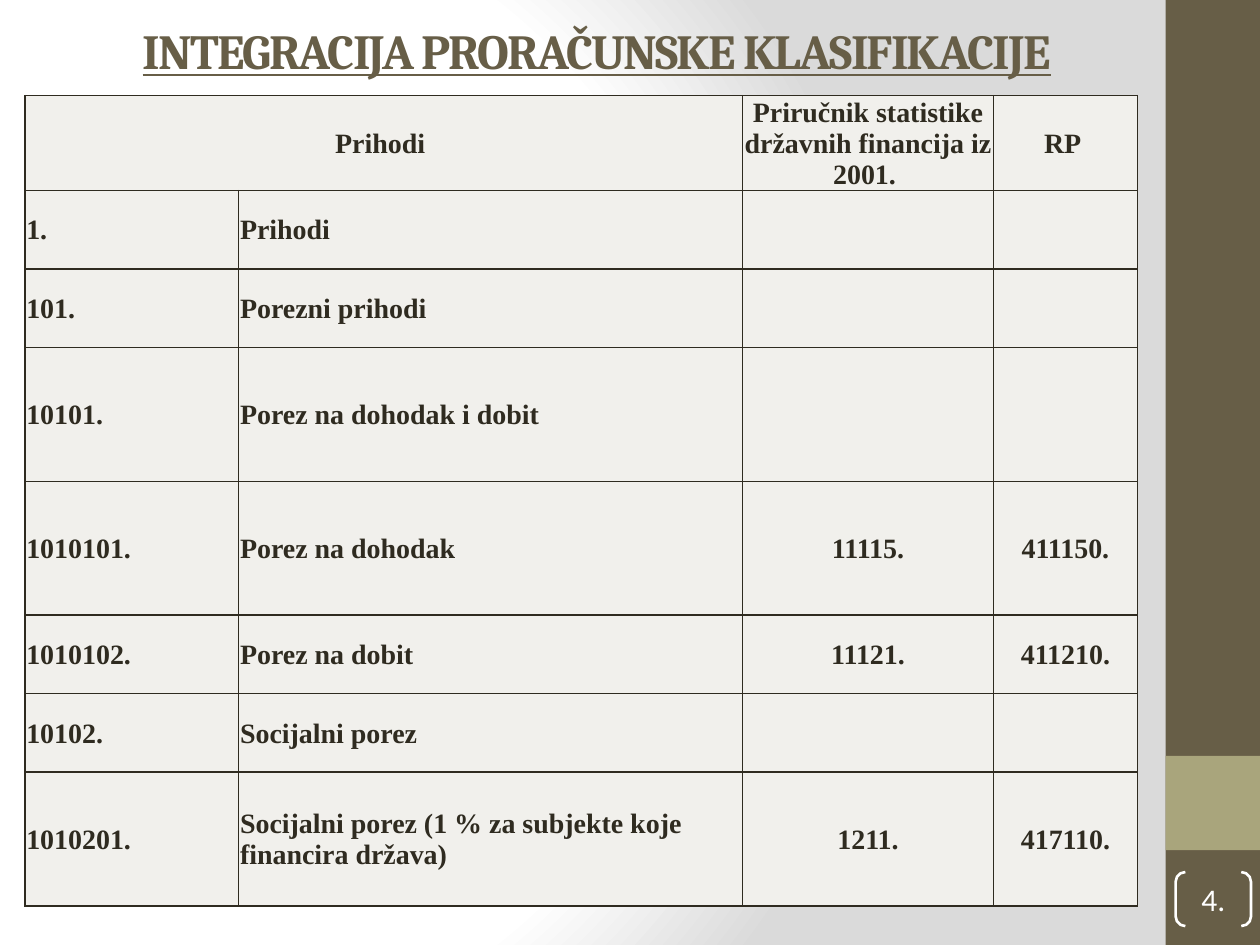
from pptx import Presentation
from pptx.dml.color import RGBColor
from pptx.enum.shapes import MSO_SHAPE as Shape
from pptx.enum.text import MSO_ANCHOR as Anchor, MSO_AUTO_SIZE as AutoSize, PP_ALIGN as Align
from pptx.oxml import parse_xml
from pptx.oxml.ns import nsdecls, qn
from pptx.util import Cm, Pt

OLIVE, SAGE, INK, PAPER, WHITE = "675E47", "A9A57C", "2F2B20", "F1F0EC", "FFFFFF"


def color(hex_value):
    return RGBColor.from_string(hex_value)


def add_span(para, text, font, size, hex_value, bold=False):
    span = para.add_run()
    span.text = text
    span.font.name = font
    span.font.size = Pt(size)
    span.font.bold = bold
    span.font.color.rgb = color(hex_value)
    return span


deck = Presentation()
deck.slide_width, deck.slide_height = Cm(25.4), Cm(19.05)
page = deck.slides.add_slide(deck.slide_layouts[5])

# Radial background
page.background.fill.solid()
background = page.element.find(".//" + qn("p:bgPr"))
stops = "".join(
    f'<a:gs pos="{percent * 1000}"><a:srgbClr val="{shade}"/></a:gs>'
    for percent, shade in [(0, WHITE), (75, WHITE), (100, "DADADA")])
background.replace(background[0], parse_xml(
    f'<a:gradFill {nsdecls("a")} rotWithShape="1"><a:gsLst>{stops}</a:gsLst>'
    '<a:path path="circle"><a:fillToRect l="20000" t="50000" r="100000" b="50000"/>'
    '</a:path></a:gradFill>'))

# Side band with its lighter square
for top, height, fill in [(0, 19.05, OLIVE), (15.24, 1.9, SAGE)]:
    band = page.shapes.add_shape(Shape.RECTANGLE, Cm(23.5), Cm(top), Cm(1.9), Cm(height))
    band.shadow.inherit = False
    band.fill.solid()
    band.fill.fore_color.rgb = color(fill)
    band.line.fill.background()

title = page.shapes.title
title.left, title.top, title.width, title.height = Cm(0.38), Cm(0.33), Cm(23.3), Cm(1.37)
title.text_frame.auto_size = AutoSize.NONE
title.text_frame.vertical_anchor = Anchor.MIDDLE
para = title.text_frame.paragraphs[0]
para.alignment = Align.CENTER
span = add_span(para, "INTEGRACIJA PRORAČUNSKE KLASIFIKACIJE", "Cambria", 28, OLIVE, bold=True)
span.font.underline = True
span.font._element.set("spc", "-100")

# Classification table
rows = [
    ("Prihodi ", "", "Priručnik statistike državnih financija iz 2001. ", "RP "),
    ("1.", "Prihodi", "", ""),
    ("101.", "Porezni prihodi", "", ""),
    ("10101.", "Porez na dohodak i dobit", "", ""),
    ("1010101.", "Porez na dohodak", "11115.", "411150."),
    ("1010102.", "Porez na dobit", "11121.", "411210."),
    ("10102.", "Socijalni porez", "", ""),
    ("1010201.", "Socijalni porez (1 % za subjekte koje financira država)", "1211.", "417110."),
]
column_widths = [4.31, 10.16, 5.06, 2.9]
low, high = 1.58, 2.7
row_heights = [low, low, low, high, high, low, low, high]

table = page.shapes.add_table(
    len(rows), len(column_widths), Cm(0.5), Cm(1.93),
    Cm(sum(column_widths)), Cm(sum(row_heights))).table
for column, width in zip(table.columns, column_widths):
    column.width = Cm(width)
for row, height in zip(table.rows, row_heights):
    row.height = Cm(height)
table.cell(0, 0).merge(table.cell(0, 1))

for r, texts in enumerate(rows):
    for c, text in enumerate(texts):
        cell = table.cell(r, c)
        cell.fill.solid()
        cell.fill.fore_color.rgb = color(PAPER)
        cell.vertical_anchor = Anchor.MIDDLE
        cell.margin_left = cell.margin_right = cell.margin_top = Cm(0.03)
        cell.margin_bottom = 0
        for index, side in enumerate("LRTB"):
            cell._tc.tcPr.insert(index, parse_xml(
                f'<a:ln{side} {nsdecls("a")} w="{Pt(1)}"><a:solidFill>'
                f'<a:srgbClr val="{INK}"/></a:solidFill></a:ln{side}>'))
        if text:
            para = cell.text_frame.paragraphs[0]
            para.alignment = Align.CENTER if r == 0 or c > 1 else Align.LEFT
            add_span(para, text, "Times New Roman", 16, INK, bold=True)

# Page number in brackets
number = page.shapes.add_shape(Shape.DOUBLE_BRACKET, Cm(23.7), Cm(17.58), Cm(1.52), Cm(1.09))
number.adjustments[0] = 0.18
number.shadow.inherit = False
number.fill.background()
number.line.color.rgb = color(WHITE)
number.line.width = Pt(1.5)
frame = number.text_frame
frame.margin_left = frame.margin_right = frame.margin_top = frame.margin_bottom = 0
frame.vertical_anchor = Anchor.MIDDLE
frame.paragraphs[0].alignment = Align.CENTER
add_span(frame.paragraphs[0], "4.", "Calibri", 18, WHITE)

deck.save("out.pptx")
